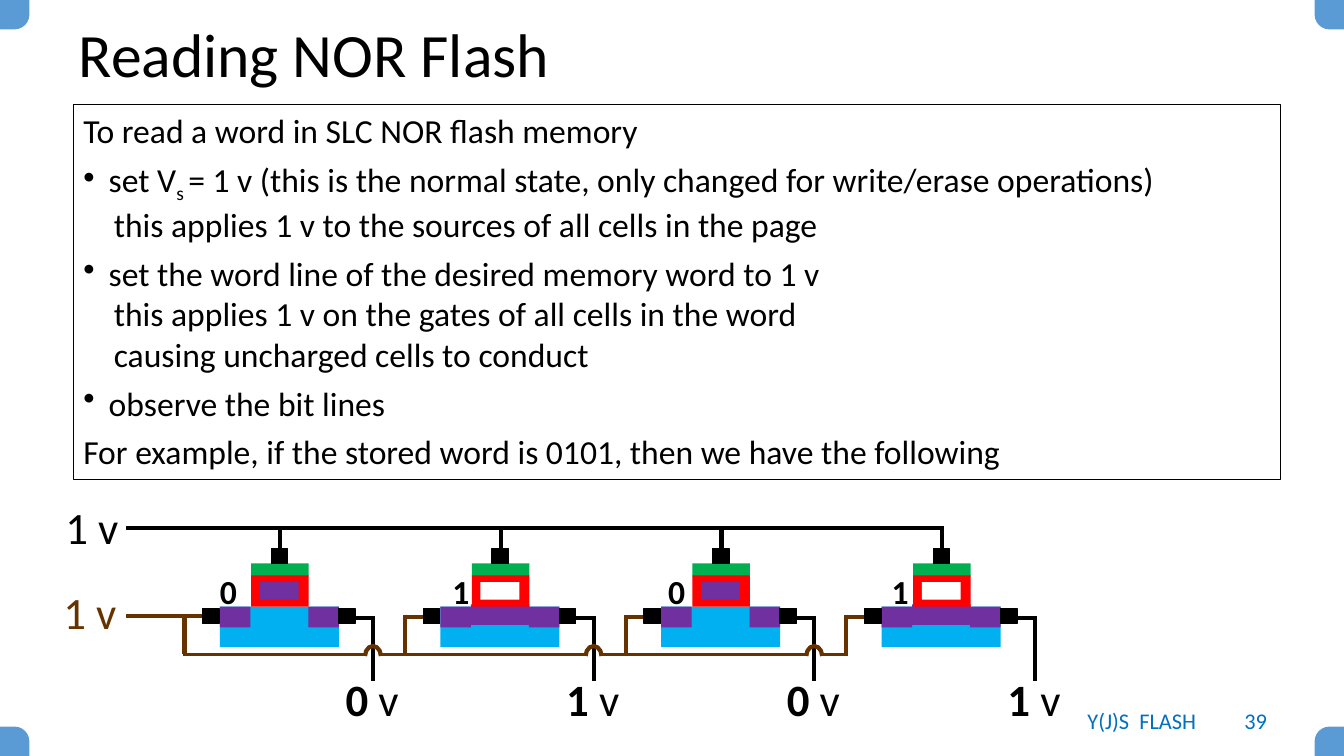
import lxml.etree
import pptx
import pptx.dml.color
import pptx.enum.shapes
import pptx.enum.text
import pptx.oxml.ns
import pptx.util

Cm = pptx.util.Cm
SHAPES = pptx.enum.shapes.MSO_SHAPE
ALIGN = pptx.enum.text.PP_ALIGN
ANCHOR = pptx.enum.text.MSO_ANCHOR

WIDTH, HEIGHT = 33.87, 19.05
FONT = "Calibri"
BLACK, WHITE, BROWN, BLUE = "000000", "FFFFFF", "663300", "0070C0"
GREEN, RED, SILICON, PURPLE, CORNER = "00B050", "FF0000", "00B0F0", "7030A0", "5B9BD5"

# Stored bits and the offset of each bit label from its cell's left edge
WORD = [("0", 0.0), ("1", 0.3), ("0", 0.18), ("1", 0.25)]
CELL_PITCH = 5.56

# Kind of paragraph, then its runs as (text, is subscript)
STEPS = [
    ("plain", [("To read a word in SLC NOR flash memory", False)]),
    ("bullet", [
        ("set V", False), ("s ", True),
        ("= 1 v (this is the normal state, only changed for write/erase operations)", False)]),
    ("detail", [("this applies 1 v to the sources of all cells in the page", False)]),
    ("bullet", [("set the word line of the desired memory word to 1 v", False)]),
    ("detail", [("this applies 1 v on the gates of all cells in the word", False)]),
    ("detail", [("causing uncharged cells to conduct", False)]),
    ("bullet", [("observe the bit lines", False)]),
    ("plain", [("For example, if the stored word is 0101, then we have the following", False)]),
]


def color(value):
    return pptx.dml.color.RGBColor.from_string(value)


def add_block(slide, kind, left, top, width, height, fill=None, line=None, points=1):
    shape = slide.shapes.add_shape(kind, Cm(left), Cm(top), Cm(width), Cm(height))
    shape.shadow.inherit = False
    if fill:
        shape.fill.solid()
        shape.fill.fore_color.rgb = color(fill)
    else:
        shape.fill.background()
    if line:
        shape.line.color.rgb = color(line)
        shape.line.width = pptx.util.Pt(points)
    else:
        shape.line.fill.background()
    return shape


def add_wire(slide, start, end, stroke, points=3):
    wire = slide.shapes.add_connector(
        pptx.enum.shapes.MSO_CONNECTOR.STRAIGHT, *[Cm(value) for value in start + end])
    wire.line.color.rgb = color(stroke)
    wire.line.width = pptx.util.Pt(points)
    properties = wire.element.find(pptx.oxml.ns.qn("p:spPr"))
    lxml.etree.SubElement(properties, pptx.oxml.ns.qn("a:effectLst"))


def add_run(paragraph, text, size, ink=BLACK, bold=False):
    run = paragraph.add_run()
    run.text = text
    run.font.name = FONT
    run.font.size = pptx.util.Pt(size)
    run.font.bold = bold
    run.font.color.rgb = color(ink)
    return run


def add_label(slide, box, runs, size, ink=BLACK, align=ALIGN.LEFT, anchor=ANCHOR.TOP):
    """Add a one-line text box; runs are (text, bold) pairs."""
    frame = slide.shapes.add_textbox(*[Cm(value) for value in box]).text_frame
    frame.word_wrap = True
    frame.vertical_anchor = anchor
    paragraph = frame.paragraphs[0]
    paragraph.alignment = align
    for text, bold in runs:
        add_run(paragraph, text, size, ink, bold)


def add_corners(slide, left, top, width, height, side=0.74):
    right, bottom = left + width - side, top + height - side
    for x, y, rotation in [(left, top, 90), (right, top, 180),
                           (right, bottom, 270), (left, bottom, 0)]:
        corner = add_block(slide, SHAPES.ROUND_1_RECTANGLE, x, y, side, side, CORNER)
        corner.adjustments[0] = 0.5
        corner.rotation = rotation


def format_title(slide, left, top, width, height):
    title = slide.shapes.title
    title.left, title.top, title.width, title.height = Cm(left), Cm(top), Cm(width), Cm(height)
    title.text_frame.vertical_anchor = ANCHOR.MIDDLE
    paragraph = title.text_frame.paragraphs[0]
    paragraph.alignment = ALIGN.LEFT
    paragraph.line_spacing = 0.9
    add_run(paragraph, "Reading NOR Flash", 44)


def add_steps(slide, left, top, width, height):
    panel = add_block(slide, SHAPES.RECTANGLE, left, top, width, height, line=BLACK, points=0.75)
    frame = panel.text_frame
    frame.word_wrap = True
    frame.vertical_anchor = ANCHOR.TOP
    for index, (kind, runs) in enumerate(STEPS):
        paragraph = frame.paragraphs[0] if index == 0 else frame.add_paragraph()
        paragraph.alignment = ALIGN.LEFT
        paragraph.space_before = pptx.util.Pt(0 if kind == "detail" else 6)
        properties = paragraph._p.get_or_add_pPr()
        if kind == "bullet":
            properties.set("marL", str(Cm(0.64)))
            properties.set("indent", str(-Cm(0.64)))
            bullet = lxml.etree.SubElement(properties, pptx.oxml.ns.qn("a:buChar"))
            bullet.set("char", "•")
        elif kind == "detail":
            properties.set("marL", str(Cm(0.77)))
        for text, subscript in runs:
            run = add_run(paragraph, text, 24)
            if subscript:
                run.font._element.set("baseline", "-25000")


def add_cell_wires(slide, left, top, is_first, is_last):
    # Gate up to the word line
    add_wire(slide, (left + 1.52, top - 2.03), (left + 1.52, top - 1.24), BLACK)
    # Drain down to the bit line
    bit_line = left + 3.86
    add_wire(slide, (left + 3.2, top + 0.28), (bit_line, top + 0.28), BLACK)
    add_wire(slide, (bit_line, top + 0.23), (bit_line, top + 1.86), BLACK)
    # Source line, hopping over the bit line on its way to the next cell
    riser, bus = left - 0.89, top + 1.2
    add_wire(slide, (riser, top + 0.2), (riser, bus), BROWN)
    if not is_first:
        add_wire(slide, (riser - 0.05, top + 0.25), (left - 0.2, top + 0.25), BROWN)
    if not is_last:
        add_wire(slide, (riser - 0.03, bus), (bit_line - 0.2, bus), BROWN, 2.25)
        add_wire(slide, (bit_line + 0.2, bus), (riser + CELL_PITCH + 0.03, bus), BROWN, 2.25)
        hop = add_block(slide, SHAPES.ARC, bit_line - 0.2, bus - 0.21, 0.4, 0.5,
                        line=BROWN, points=3)
        hop.adjustments[0] = 108  # 180 degrees
        hop.adjustments[1] = 0


def add_cell(slide, left, top, bit, label_offset):
    """Draw one floating-gate transistor; top is the substrate's upper edge."""
    charged = bit == "0"
    parts = [
        (0.79, -1.09, 1.45, 0.33, GREEN),  # control gate
        (0, 0, 3.0, 1.02, SILICON),  # substrate
        (0, 0, 0.77, 0.52, PURPLE),  # source
        (2.23, 0, 0.77, 0.52, PURPLE),  # drain
    ]
    if not charged:
        parts.append((0.77, -0.06, 1.47, 0.52, PURPLE))  # conducting channel
    parts += [
        (0.79, -0.79, 1.45, 0.79, RED),  # insulator
        (1.01, -0.62, 0.98, 0.44, PURPLE if charged else WHITE),  # floating gate
    ]
    for x, y, width, height, fill in parts:
        add_block(slide, SHAPES.RECTANGLE, left + x, top + y, width, height, fill)
    # Gate, source and drain contacts
    for x, y in [(1.3, -1.47), (-0.43, 0.05), (3.0, 0.05)]:
        add_block(slide, SHAPES.RECTANGLE, left + x, top + y, 0.41, 0.38, BLACK, BLACK)
    # Stored bit and the voltage read from it
    add_label(slide, (left + label_offset - 0.25, top - 1.04, 1.0, 1.27), [(bit, True)], 24)
    add_label(slide, (left + 2.92, top + 1.5, 2.0, 1.63), [(bit, True), (" v", False)], 32)


def add_circuit(slide, left, top):
    first_cell, cell_top = left + 4.19, top + 2.82
    word_line, source_line = top + 0.84, cell_top + 0.23
    last_gate = first_cell + CELL_PITCH * (len(WORD) - 1) + 1.52
    # Word line and common source line
    add_wire(slide, (left + 1.83, word_line), (last_gate + 0.05, word_line), BLACK)
    add_wire(slide, (left + 1.83, source_line), (first_cell, source_line), BROWN)
    add_label(slide, (left + 0.05, top, 2.0, 1.63), [("1 v", False)], 32)
    add_label(slide, (left, top + 2.13, 2.0, 1.63), [("1 v", False)], 32, BROWN)
    # All wires lie behind the cells
    columns = [first_cell + CELL_PITCH * index for index in range(len(WORD))]
    for x in columns:
        add_cell_wires(slide, x, cell_top, x == columns[0], x == columns[-1])
    for x, (bit, label_offset) in zip(columns, WORD):
        add_cell(slide, x, cell_top, bit, label_offset)


def add_footer(slide, left, top, height):
    add_label(slide, (left, top, 3.81, height), [("Y(J)S  FLASH", False)], 16, BLUE,
              ALIGN.CENTER, ANCHOR.MIDDLE)
    add_label(slide, (left + 3.58, top, 1.73, height), [("39", False)], 16, BLUE,
              ALIGN.RIGHT, ANCHOR.MIDDLE)


def main():
    presentation = pptx.Presentation()
    presentation.slide_width, presentation.slide_height = Cm(WIDTH), Cm(HEIGHT)
    slide = presentation.slides.add_slide(presentation.slide_layouts[5])
    add_corners(slide, 0, 0, WIDTH, HEIGHT)
    format_title(slide, 1.73, 0.53, 30.43, 1.83)
    add_steps(slide, 1.85, 2.64, 30.43, 9.45)
    add_circuit(slide, 1.35, 12.47)
    add_footer(slide, 26.87, 17.65, 1.02)
    presentation.save("out.pptx")


if __name__ == "__main__":
    main()
